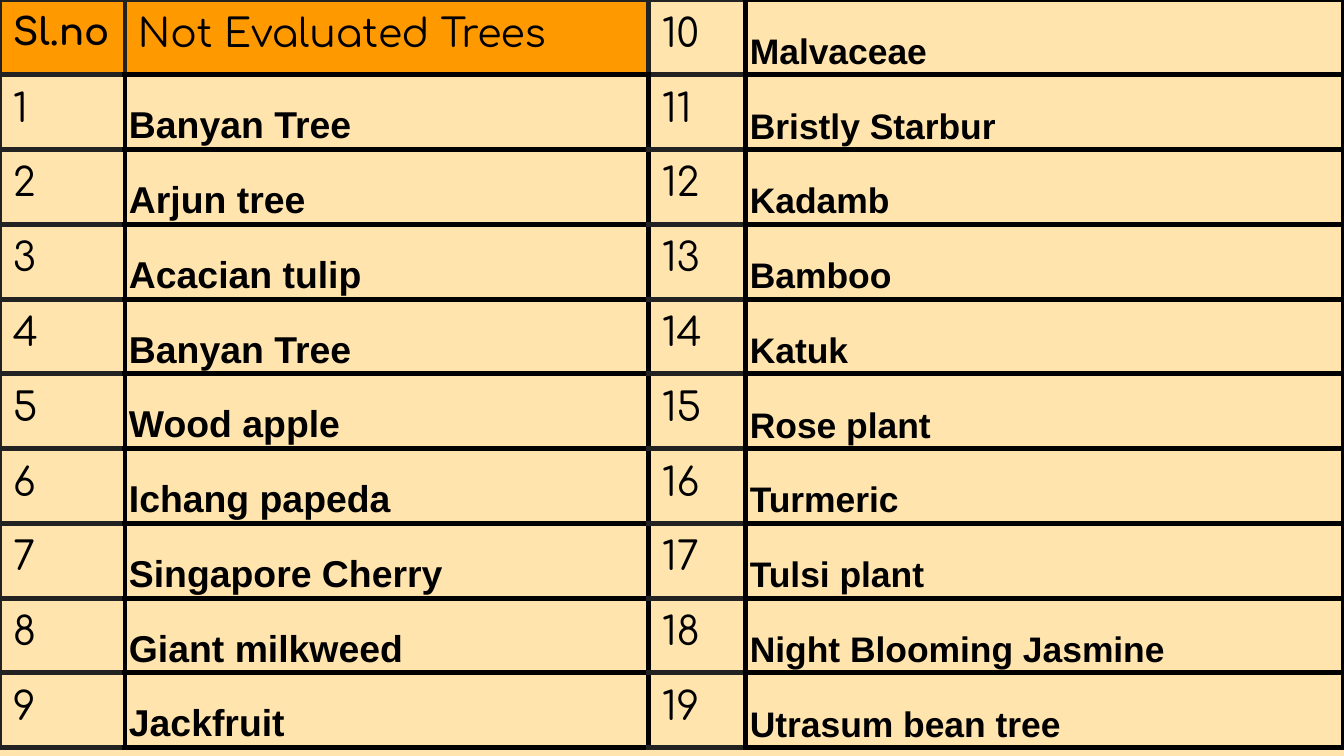
"""Build a slide with a table of trees that have not been evaluated."""
from lxml import etree
from pptx import Presentation
from pptx import util as u
from pptx.dml.color import RGBColor
from pptx.enum import text
from pptx.oxml.ns import qn

SCALE = 914400 / 134.4
WIDTH, HEIGHT = 1344, 756
CREAM = RGBColor(0xFF, 0xE4, 0xAE)
ORANGE = RGBColor(0xFF, 0x99, 0x00)
BLACK = RGBColor(0x00, 0x00, 0x00)
CHARCOAL = RGBColor(0x22, 0x22, 0x22)

TABLE_HEIGHT = 748
COLUMN_WIDTHS = (125, 524, 97, 598)
LEFT_TREES = (
    "Banyan Tree", "Arjun tree", "Acacian tulip", "Banyan Tree", "Wood apple",
    "Ichang papeda", "Singapore Cherry", "Giant milkweed", "Jackfruit",
)
RIGHT_TREES = (
    "Malvaceae", "Bristly Starbur", "Kadamb", "Bamboo", "Katuk", "Rose plant",
    "Turmeric", "Tulsi plant", "Night Blooming Jasmine", "Utrasum bean tree",
)


def px(length):
    return u.Emu(round(length * SCALE))


def write_text(frame, content, font="Comfortaa", size=21, bold=False, spacing=1.0):
    paragraph = frame.paragraphs[0]
    paragraph.line_spacing = spacing
    run = paragraph.add_run()
    run.text = content
    run.font.name = font
    run.font.size = u.Pt(size)
    run.font.bold = bold
    run.font.color.rgb = BLACK


class TreeSlide:
    def __init__(self, presentation):
        self.border_width = u.Pt(3)
        self.slide = presentation.slides.add_slide(presentation.slide_layouts[6])
        background = self.slide.background.fill
        background.solid()
        background.fore_color.rgb = CREAM

    def table(self, row_count, height, widths):
        shape = self.slide.shapes.add_table(
            row_count, len(widths), 0, 0, px(sum(widths)), px(height))
        table = shape.table
        table.first_row = table.horz_banding = False
        for column, width in zip(table.columns, widths):
            column.width = px(width)
        for row in table.rows:
            row.height = px(height / row_count)
        return table

    def cell(self, cell, content, margins, anchor, borders, fill=None, **text_format):
        cell.margin_left = cell.margin_right = px(margins[0])
        cell.margin_top = cell.margin_bottom = px(margins[1])
        cell.vertical_anchor = anchor
        if fill is None:
            cell.fill.background()
        else:
            cell.fill.solid()
            cell.fill.fore_color.rgb = fill
        self.borders(cell, borders)
        write_text(cell.text_frame, content, **text_format)

    def borders(self, cell, colors):
        properties = cell._tc.get_or_add_tcPr()
        for index, (side, color) in enumerate(zip("LRTB", colors)):
            line = etree.Element(qn(f"a:ln{side}"), w=str(self.border_width))
            fill = etree.SubElement(line, qn("a:solidFill"))
            etree.SubElement(fill, qn("a:srgbClr"), val=str(color))
            properties.insert(index, line)

    def label(self, cell, content, left=CHARCOAL, right=BLACK, bottom=CHARCOAL, **options):
        self.cell(cell, content, (13, 13), text.MSO_ANCHOR.TOP,
                  (left, right, CHARCOAL, bottom), **options)

    def tree(self, cell, name, size):
        self.cell(cell, name, (4, 3), text.MSO_ANCHOR.BOTTOM, (BLACK,) * 4,
                  font="Arial", size=size, bold=True, spacing=1.15)


def main():
    presentation = Presentation()
    presentation.slide_width = px(WIDTH)
    presentation.slide_height = px(HEIGHT)
    page = TreeSlide(presentation)
    table = page.table(len(RIGHT_TREES), TABLE_HEIGHT, COLUMN_WIDTHS)

    page.label(table.cell(0, 0), "Sl.no", right=CHARCOAL, fill=ORANGE, size=20, bold=True)
    page.label(table.cell(0, 1), "Not Evaluated Trees", right=CHARCOAL, bottom=BLACK,
               fill=ORANGE)
    for row, name in enumerate(LEFT_TREES, start=1):
        page.label(table.cell(row, 0), str(row))
        page.tree(table.cell(row, 1), name, size=20)
    for row, name in enumerate(RIGHT_TREES):
        page.label(table.cell(row, 2), str(row + 10), left=BLACK if row else CHARCOAL)
        page.tree(table.cell(row, 3), name, size=19)

    presentation.save("out.pptx")


if __name__ == "__main__":
    main()
